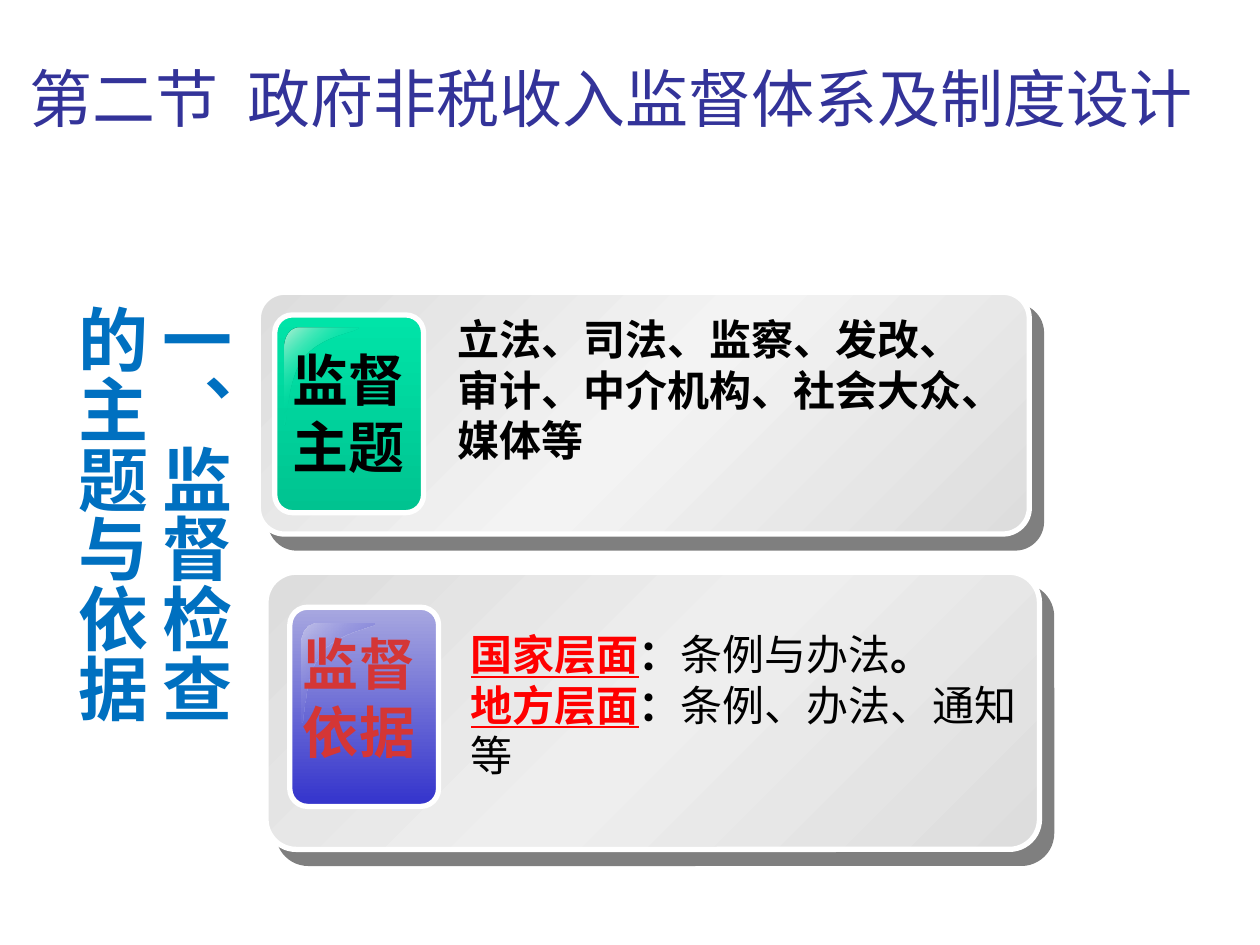
from dataclasses import dataclass

from lxml import etree
from pptx import Presentation
from pptx import util as u
from pptx.dml.color import RGBColor
from pptx.enum import shapes, text
from pptx.oxml import ns

Pt = u.Pt


@dataclass(frozen=True)
class Theme:
    sans: str = "Noto Sans CJK SC"
    strong: str = "Noto Sans CJK JP"
    label: str = "Arial"
    title: str = "333399"
    heading: str = "0070C0"
    ink: str = "000000"
    red: str = "FF0000"
    label_red: str = "D43636"
    white: str = "FFFFFF"
    title_size: int = 36
    heading_size: int = 40
    label_size: int = 32
    body_size: int = 24
    border: int = 3


T = Theme()

# Gloss outline in points: start, two corner curves and the inner sweep
GLOSS_START = (8.6, 0)
GLOSS_CORNER = [(3.6, 0), (0, 5), (0, 11.5)]
GLOSS_FOOT = (0, 56.2)
GLOSS_SWEEP = [[(2.2, 56.9), (0.7, 29.5), (11.5, 16.6)],
               [(22.3, 3.6), (42.5, 2.9), (41.8, 0)]]


def sub(parent, tag, **attrs):
    return etree.SubElement(parent, ns.qn(tag), **{k: str(v) for k, v in attrs.items()})


def set_gradient(sp, stops, angle):
    """Stops are (position %, colour) or (position %, colour, opacity %)."""
    sp.fill.gradient()
    grad = sp._element.spPr.find(ns.qn("a:gradFill"))
    for child in list(grad):
        grad.remove(child)
    lst = sub(grad, "a:gsLst")
    for pos, color, *alpha in stops:
        clr = sub(sub(lst, "a:gs", pos=pos * 1000), "a:srgbClr", val=color)
        if alpha:
            sub(clr, "a:alpha", val=alpha[0] * 1000)
    sub(grad, "a:lin", ang=angle * 60000, scaled=0)


def add_round_rect(parent, box, adj, stops, angle):
    sp = parent.shapes.add_shape(shapes.MSO_SHAPE.ROUNDED_RECTANGLE, *map(Pt, box))
    sp.adjustments[0] = adj
    sp.shadow.inherit = False
    set_gradient(sp, stops, angle)
    sp.line.color.rgb = RGBColor.from_string(T.white)
    sp.line.width = Pt(T.border)
    return sp


def add_shadow(sp):
    effects = sp._element.spPr.find(ns.qn("a:effectLst"))
    shadow = sub(effects, "a:outerShdw", blurRad=0, dist=Pt(10.6),
                 dir=49 * 60000, algn="ctr", rotWithShape=0)
    sub(sub(shadow, "a:srgbClr", val=T.ink), "a:alpha", val=50000)


def curve(start, controls, steps=12):
    """Points along a cubic curve, without its start."""
    pts = [start, *controls]
    for i in range(1, steps + 1):
        t = i / steps
        weights = ((1 - t) ** 3, 3 * t * (1 - t) ** 2, 3 * t * t * (1 - t), t ** 3)
        yield tuple(sum(w * pt[axis] for w, pt in zip(weights, pts)) for axis in (0, 1))


def add_gloss(parent, left, top, stops):
    pts = [*curve(GLOSS_START, GLOSS_CORNER), GLOSS_FOOT]
    for controls in GLOSS_SWEEP:
        pts += list(curve(pts[-1], controls))
    start, *rest = [(Pt(left + x), Pt(top + y)) for x, y in [GLOSS_START, *pts]]
    builder = parent.shapes.build_freeform(*start)
    builder.add_line_segments(rest, close=True)
    sp = builder.convert_to_shape()
    sp.shadow.inherit = False
    set_gradient(sp, stops, 45)
    sp.line.fill.background()


def format_run(r, size, color, font, bold=False, underline=False):
    r.font.size = Pt(size)
    r.font.color.rgb = RGBColor.from_string(color)
    r.font.name = font
    r.font.bold = bold
    r.font.underline = underline
    sub(r._r.get_or_add_rPr(), "a:ea", typeface=font)


def add_text(parent, box, paragraphs, size, wrap=True, align=None):
    """Each paragraph is a list of (text, colour, font, bold, underline) runs."""
    s = parent.shapes.add_textbox(*map(Pt, box))
    tf = s.text_frame
    tf.word_wrap = wrap
    tf.auto_size = text.MSO_AUTO_SIZE.SHAPE_TO_FIT_TEXT
    for i, runs in enumerate(paragraphs):
        p = tf.add_paragraph() if i else tf.paragraphs[0]
        p.alignment = align
        for words, *style in runs:
            r = p.add_run()
            r.text = words
            format_run(r, size, *style)
    return s


def add_panel(slide, card, middle, tile, tile_stops, gloss, gloss_stops,
              label_at, label_lines, label_color, body_box, body):
    g = slide.shapes.add_group_shape()
    # Card with hard shadow
    add_shadow(add_round_rect(g, card, 0.109,
                              [(0, "DDDDDD"), (50, middle), (100, "DDDDDD")], 45))
    # Coloured tile, its gloss and label
    add_round_rect(g, tile, 0.119, tile_stops, 90)
    add_gloss(g, *gloss, gloss_stops)
    lines = [[(line, label_color, T.label, True)] for line in label_lines]
    add_text(g, (*label_at, 79.2, 85), lines, T.label_size, False, text.PP_ALIGN.CENTER)
    # Body
    add_text(g, body_box, body, T.body_size)


def level(name, content, *ending):
    return [(name, T.red, T.strong, True, True), ("：", T.ink, T.strong, True),
            (content, T.ink, T.sans), *ending]


def main():
    prs = Presentation()
    prs.slide_width, prs.slide_height = Pt(720), Pt(540)
    slide = prs.slides.add_slide(prs.slide_layouts[6])

    # Title
    s = add_text(slide, (10, 26, 726, 54.7),
                 [[("第二节  政府非税收入监督体系及制度设计", T.title, T.sans)]], T.title_size)
    s.text_frame.auto_size = text.MSO_AUTO_SIZE.NONE
    s.text_frame.vertical_anchor = text.MSO_ANCHOR.BOTTOM

    # Supervising bodies
    add_panel(slide, (147.6, 167, 440.6, 138.2), "F3F3F3",
              (157, 180, 85, 113), [(0, "00E4A8"), (100, "00C390")],
              (162.7, 187.2), [(0, "B5F1D5"), (50, "00E4A8", 0), (100, "B5F1D5")],
              (159.8, 193.7), ("监督", "主题"), T.ink, (254.2, 175.7, 324, 94.3),
              [[("立法、司法、监察、发改、审计、中介机构、社会大众、媒体等",
                 T.ink, T.sans, True)]])

    # Legal basis
    add_panel(slide, (152, 327, 442, 158.4), "EEEEEE",
              (165.6, 347, 85, 113.8), [(0, "A8A8E0"), (100, "3333CC")],
              (172, 356.4), [(0, "C1C1E8"), (100, "3333CC", 0)],
              (165.6, 356.4), ("监督", "依据"), T.label_red, (262, 355.7, 340.6, 94.3),
              [level("国家层面", "条例与办法", ("。", T.ink, T.strong, True)),
               level("地方层面", "条例、办法、通知等")])

    # Vertical heading
    s = add_text(slide, (27.4, 167, 111.6, 290.2),
                 [[("一、监督检查的主题与依据", T.heading, T.strong, True)]], T.heading_size)
    s.text_frame._txBody.bodyPr.set("vert", "eaVert")

    prs.save("out.pptx")


if __name__ == "__main__":
    main()
